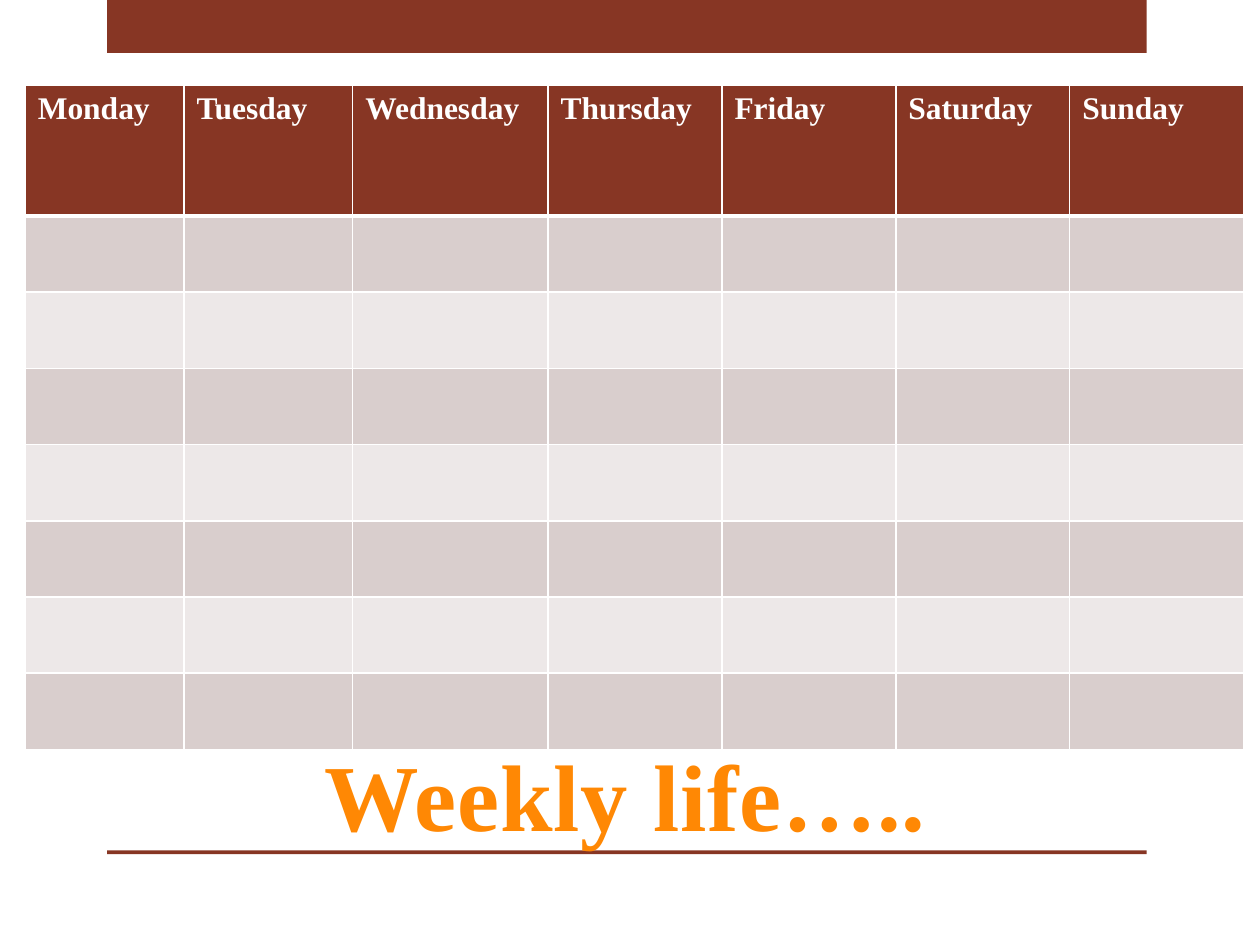
from lxml.etree import SubElement as Sub
from pptx import Presentation
from pptx.dml.color import RGBColor
from pptx.enum.shapes import MSO_SHAPE as Shape
from pptx.enum.text import MSO_AUTO_SIZE as Fit, PP_ALIGN as Align
from pptx.oxml.ns import qn
from pptx.util import Inches, Pt

WIDE, HIGH = 10, 7.5
FONT = "Times New Roman"
RUST = RGBColor(0x87, 0x36, 0x24)
ROSE = RGBColor(0xD9, 0xCE, 0xCD)
PALE = RGBColor(0xED, 0xE8, 0xE8)
WHITE = RGBColor(0xFF, 0xFF, 0xFF)
ORANGE = RGBColor(0xFF, 0x88, 0x04)

DAYS = {"Monday": 1.26, "Tuesday": 1.34, "Wednesday": 1.55, "Thursday": 1.38,
        "Friday": 1.38, "Saturday": 1.38, "Sunday": 1.38}
HEAD, ROW, ROWS = 1.04, 0.605, 7


def inches(box):
    return [Inches(n) for n in box]


def add_run(para, text, size, color):
    run = para.add_run()
    run.text = text
    font = run.font
    font.name, font.size, font.bold = FONT, Pt(size), True
    font.color.rgb = color
    return run


def add_band(slide, box):
    band = slide.shapes.add_shape(Shape.RECTANGLE, *inches(box))
    band.shadow.inherit = False
    band.fill.solid()
    band.fill.fore_color.rgb = RUST
    band.line.fill.background()


def add_frame(slide, box):
    """Place the top bar and the bottom rule at the ends of the box."""
    left, top, width, height = box
    bar, rule = 0.42, 0.03
    add_band(slide, (left, top, width, bar))
    add_band(slide, (left, top + height - rule, width, rule))


def set_edges(cell, top, bottom):
    props = cell._tc.get_or_add_tcPr()
    widths = {"a:lnL": 1, "a:lnR": 1, "a:lnT": top, "a:lnB": bottom}
    for spot, (tag, width) in enumerate(widths.items()):
        line = Sub(props, qn(tag), w=str(Pt(width)))
        fill = Sub(line, qn("a:solidFill"))
        Sub(fill, qn("a:srgbClr"), val=str(WHITE))
        props.insert(spot, line)


def add_week(slide, box):
    """Place the day headings over rows of empty, striped cells."""
    table = slide.shapes.add_table(ROWS + 1, len(DAYS), *inches(box)).table
    for col, width in zip(table.columns, DAYS.values()):
        col.width = Inches(width)
    for r, row in enumerate(table.rows):
        row.height = Inches(ROW if r else HEAD)
        for cell in row.cells:
            cell.fill.solid()
            cell.fill.fore_color.rgb = (ROSE if r % 2 else PALE) if r else RUST
            set_edges(cell, top=3 if r == 1 else 1, bottom=1 if r else 3)
    for cell, day in zip(table.rows[0].cells, DAYS):
        add_run(cell.text_frame.paragraphs[0], day, 18, WHITE)


def add_title(slide, box):
    frame = slide.shapes.add_textbox(*inches(box)).text_frame
    frame.word_wrap = False
    frame.auto_size = Fit.SHAPE_TO_FIT_TEXT
    para = frame.paragraphs[0]
    para.alignment = Align.CENTER
    run = add_run(para, "Weekly life…..", 54, ORANGE)
    run.font._element.set("spc", "50")


def main():
    deck = Presentation()
    deck.slide_width, deck.slide_height = Inches(WIDE), Inches(HIGH)
    slide = deck.slides.add_slide(deck.slide_layouts[6])
    add_frame(slide, (0.085 * WIDE, 0, 0.825 * WIDE, 0.904 * HIGH))
    add_week(slide, (0.02 * WIDE, 0.09 * HIGH,
                     sum(DAYS.values()), HEAD + ROWS * ROW))
    add_title(slide, (0.245 * WIDE, 0.773 * HIGH, 0.503 * WIDE, 0.135 * HIGH))
    deck.save("out.pptx")


if __name__ == "__main__":
    main()
